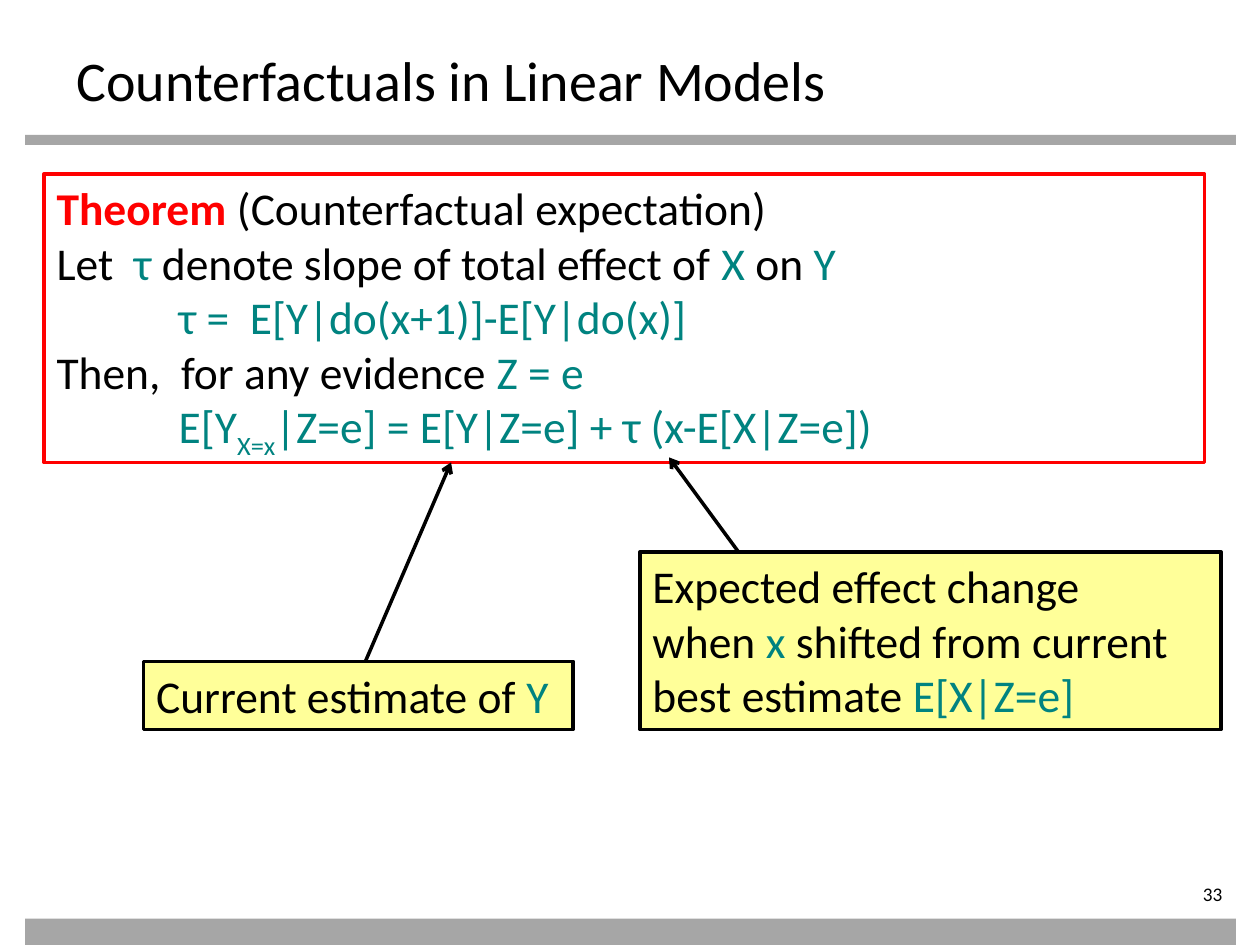
from lxml.etree import SubElement
from pptx import Presentation
from pptx.dml.color import RGBColor
from pptx.enum.shapes import MSO_CONNECTOR, MSO_SHAPE
from pptx.enum.text import MSO_ANCHOR, MSO_AUTO_SIZE, PP_ALIGN
from pptx.oxml.ns import qn
from pptx.util import Inches, Pt

BLACK = RGBColor(0x00, 0x00, 0x00)
WHITE = RGBColor(0xFF, 0xFF, 0xFF)
RED = RGBColor(0xFF, 0x00, 0x00)
TEAL = RGBColor(0x00, 0x83, 0x80)
GREY = RGBColor(0xA6, 0xA6, 0xA6)
YELLOW = RGBColor(0xFF, 0xFF, 0x99)
FONT = "Calibri"
FORMULA_INDENT = 0.97


def add_text(p, text, size=26, color=BLACK, bold=False, baseline=None):
    r = p.add_run()
    r.text = text
    r.font.name = FONT
    r.font.size = Pt(size)
    r.font.bold = bold
    r.font.color.rgb = color
    if baseline is not None:
        r.font._element.set("baseline", str(baseline * 1000))


def add_box(slide, box, fill, line=None):
    sp = slide.shapes.add_shape(MSO_SHAPE.RECTANGLE, *map(Inches, box))
    sp.shadow.inherit = False
    sp.fill.solid()
    sp.fill.fore_color.rgb = fill
    if line is None:
        sp.line.fill.background()
    else:
        sp.line.color.rgb = line
        sp.line.width = Pt(2)
    return sp


def add_statement(slide, box, fill, line, lines, wrap=True):
    """Framed text; each line is (indent, [(text, format), ...])."""
    tf = add_box(slide, box, fill, line).text_frame
    tf.word_wrap = wrap
    tf.auto_size = MSO_AUTO_SIZE.SHAPE_TO_FIT_TEXT
    tf.vertical_anchor = MSO_ANCHOR.TOP
    for i, (indent, runs) in enumerate(lines):
        p = tf.paragraphs[0] if i == 0 else tf.add_paragraph()
        p.alignment = PP_ALIGN.LEFT
        if indent:
            p._p.get_or_add_pPr().set("marL", str(Inches(indent)))
        for text, style in runs:
            add_text(p, text, **style)


def add_label(slide, box, text, size, align, margins):
    tf = slide.shapes.add_textbox(*map(Inches, box)).text_frame
    tf.word_wrap = True
    (tf.margin_left, tf.margin_top,
     tf.margin_right, tf.margin_bottom) = map(Inches, margins)
    p = tf.paragraphs[0]
    p.alignment = align
    add_text(p, text, size=size)


def add_arrow(slide, start, end):
    c = slide.shapes.add_connector(MSO_CONNECTOR.STRAIGHT,
                                   *map(Inches, start + end))
    c.line.color.rgb = BLACK
    c.line.width = Pt(2)
    SubElement(c.line._get_or_add_ln(), qn("a:tailEnd"), type="arrow")
    SubElement(c._element.spPr, qn("a:effectLst"))


def add_theorem(slide, box):
    plain, math = {}, {"color": TEAL}
    add_statement(slide, box, WHITE, RED, [
        (0, [("Theorem ", {"color": RED, "bold": True}),
             ("(Counterfactual expectation)", plain)]),
        (0, [("Let  ", plain), ("τ", math),
             (" denote slope of total effect of ", plain), ("X", math),
             (" on ", plain), ("Y", math)]),
        (FORMULA_INDENT, [("τ =  E[Y|do(x+1)]-E[Y|do(x)]", math)]),
        (0, [("Then,  for any evidence ", plain), ("Z = e", math)]),
        (FORMULA_INDENT, [("E[Y", math),
                          ("X=x", {"color": TEAL, "baseline": -25}),
                          ("|Z=e] = E[Y|Z=e] + τ (x-E[X|Z=e])", math)]),
    ])


def add_note(slide, box, lines):
    """Yellow note; every second piece of a line is a math term."""
    add_statement(slide, box, YELLOW, BLACK, [
        (0, [(text, {"color": TEAL if i % 2 else BLACK})
             for i, text in enumerate(pieces)])
        for pieces in lines], wrap=False)


def main():
    prs = Presentation()
    prs.slide_width, prs.slide_height = Inches(10), Inches(7.5)
    slide = prs.slides.add_slide(prs.slide_layouts[6])

    # Grey bands
    for top, height in ((1.07, 0.08), (7.29, 0.21)):
        add_box(slide, (0.2, top, 9.61, height), GREY)

    # Theorem, title and page number
    add_theorem(slide, (0.35, 1.38, 9.21, 2.29))
    add_label(slide, (0.51, 0.28, 9, 0.55), "Counterfactuals in Linear Models",
              32, PP_ALIGN.LEFT, (0.1, 0.08, 0.1, 0))
    add_label(slide, (8.7, 7, 1.1, 0.22), "33", 11, PP_ALIGN.RIGHT,
              (0, 0, 0.1, 0))

    # Arrows from the notes to the terms they explain
    add_arrow(slide, (2.87, 5.32), (3.58, 3.67))
    add_arrow(slide, (5.89, 4.42), (5.31, 3.63))

    # Notes
    add_note(slide, (1.14, 5.25, 3.41, 0.54), [["Current estimate of ", "Y"]])
    add_note(slide, (5.08, 4.38, 4.61, 1.41), [
        ["Expected effect change"],
        ["when ", "x", " shifted from current"],
        ["best estimate ", "E[X|Z=e]"],
    ])

    prs.save("out.pptx")


if __name__ == "__main__":
    main()
